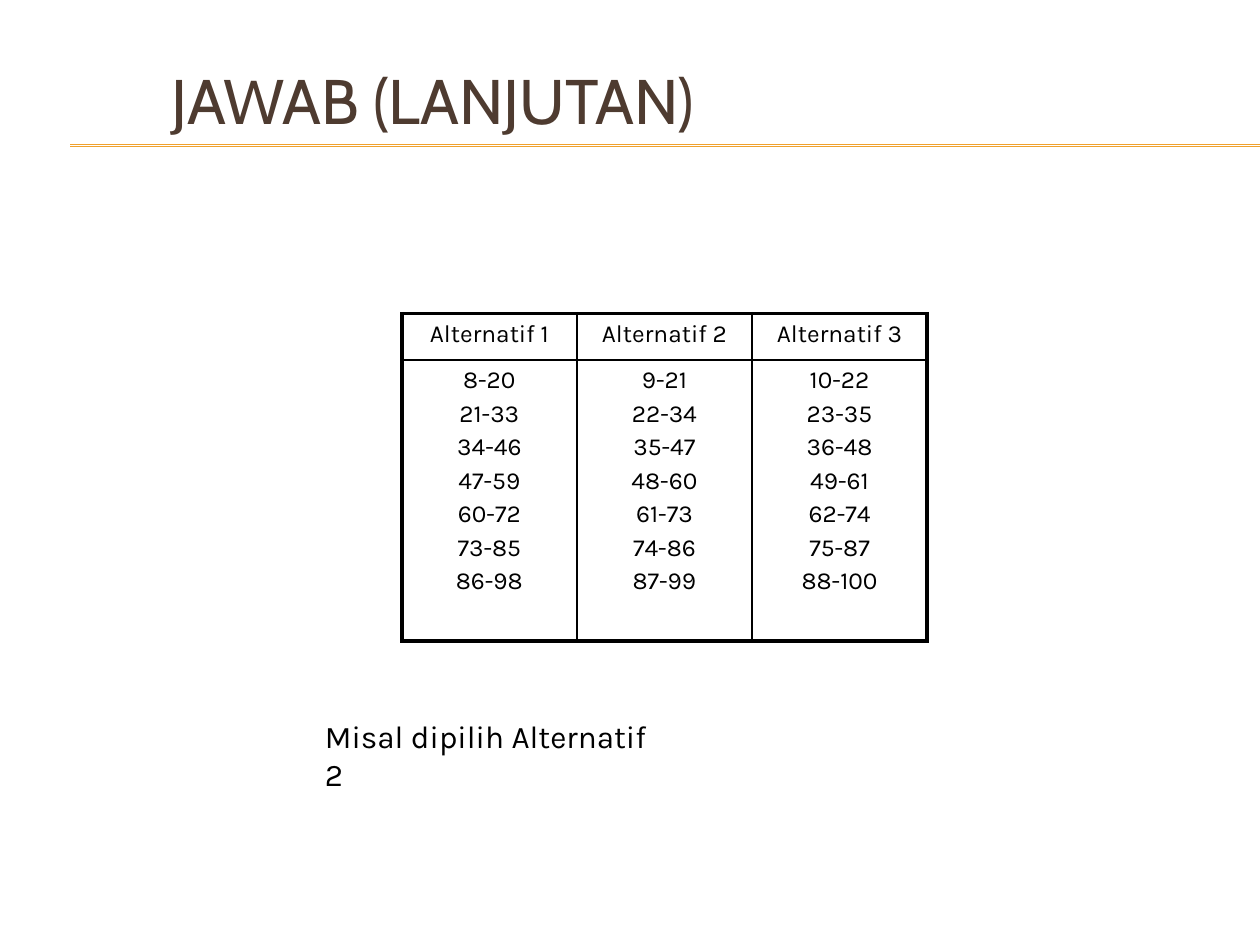
from lxml import etree
from pptx import Presentation
from pptx.dml.color import RGBColor
from pptx.enum.shapes import MSO_CONNECTOR
from pptx.enum.text import MSO_ANCHOR, PP_ALIGN
from pptx.oxml import parse_xml
from pptx.oxml.ns import qn
from pptx.util import Cm, Pt

STRAIGHT = MSO_CONNECTOR.STRAIGHT
MIDDLE = MSO_ANCHOR.MIDDLE
LEFT, CENTER = PP_ALIGN.LEFT, PP_ALIGN.CENTER
DRAWING = "http://schemas.openxmlformats.org/drawingml/2006/main"
THIN, THICK = Pt(1), Pt(2.25)


def write(frame, text, font="Karla", size=14, color="000000", align=LEFT, before=0):
    """Fill a text frame, one paragraph for each line of text."""
    frame.word_wrap = True
    for index, line in enumerate(text.split("\n")):
        para = frame.paragraphs[0] if index == 0 else frame.add_paragraph()
        para.alignment = align
        para.space_before = Pt(before)
        span = para.add_run()
        span.text = line
        span.font.name = font
        span.font.size = Pt(size)
        span.font.color.rgb = RGBColor.from_string(color)


def set_borders(cell, widths):
    """Draw the left, right, top and bottom borders, in that order."""
    properties = cell._tc.get_or_add_tcPr()
    for index, (side, width) in enumerate(zip("LRTB", widths)):
        properties.insert(index, parse_xml(
            f'<a:ln{side} xmlns:a="{DRAWING}" w="{width}"><a:solidFill>'
            f'<a:srgbClr val="000000"/></a:solidFill></a:ln{side}>'))


deck = Presentation()
deck.slide_width, deck.slide_height = Cm(25.4), Cm(19.05)
page = deck.slides.add_slide(deck.slide_layouts[6])

# Double rule under the title
for y in (2.92, 2.95):
    rule = page.shapes.add_connector(STRAIGHT, Cm(1.42), Cm(y), Cm(25.4), Cm(y))
    rule.line.color.rgb = RGBColor.from_string("F0A22E")
    rule.line.width = Pt(0.75)
    etree.SubElement(rule._element.spPr, qn("a:effectLst"))

title = page.shapes.add_textbox(Cm(3.2), Cm(0.64), Cm(20.5), Cm(2.74))
title.text_frame.vertical_anchor = MIDDLE
write(title.text_frame, "JAWAB (LANJUTAN)", font="Cabin", size=36, color="4E3B30")

# Class intervals: seven classes of width 13, each alternative starting one higher
columns, classes, class_width, first_start = 3, 7, 13, 8
table = page.shapes.add_table(2, columns, Cm(8.1), Cm(6.32), Cm(10.59), Cm(6.6)).table
table.first_row = table.horz_banding = False
table.rows[0].height, table.rows[1].height = Cm(0.94), Cm(5.66)
for column in range(columns):
    table.columns[column].width = Cm(3.53)
    starts = [first_start + column + class_width * step for step in range(classes)]
    intervals = "\n".join(f"{start}-{start + class_width - 1}" for start in starts)
    for row, text in enumerate((f"Alternatif {column + 1}", intervals)):
        cell = table.cell(row, column)
        cell.fill.background()
        write(cell.text_frame, text, align=CENTER, before=2.8)
        set_borders(cell, (
            THICK if column == 0 else THIN,
            THICK if column == columns - 1 else THIN,
            THICK if row == 0 else THIN,
            THICK if row == 1 else THIN))

note = page.shapes.add_textbox(Cm(6.3), Cm(14.33), Cm(7.04), Cm(1.02))
write(note.text_frame, "Misal dipilih Alternatif 2", size=18)

deck.save("out.pptx")
